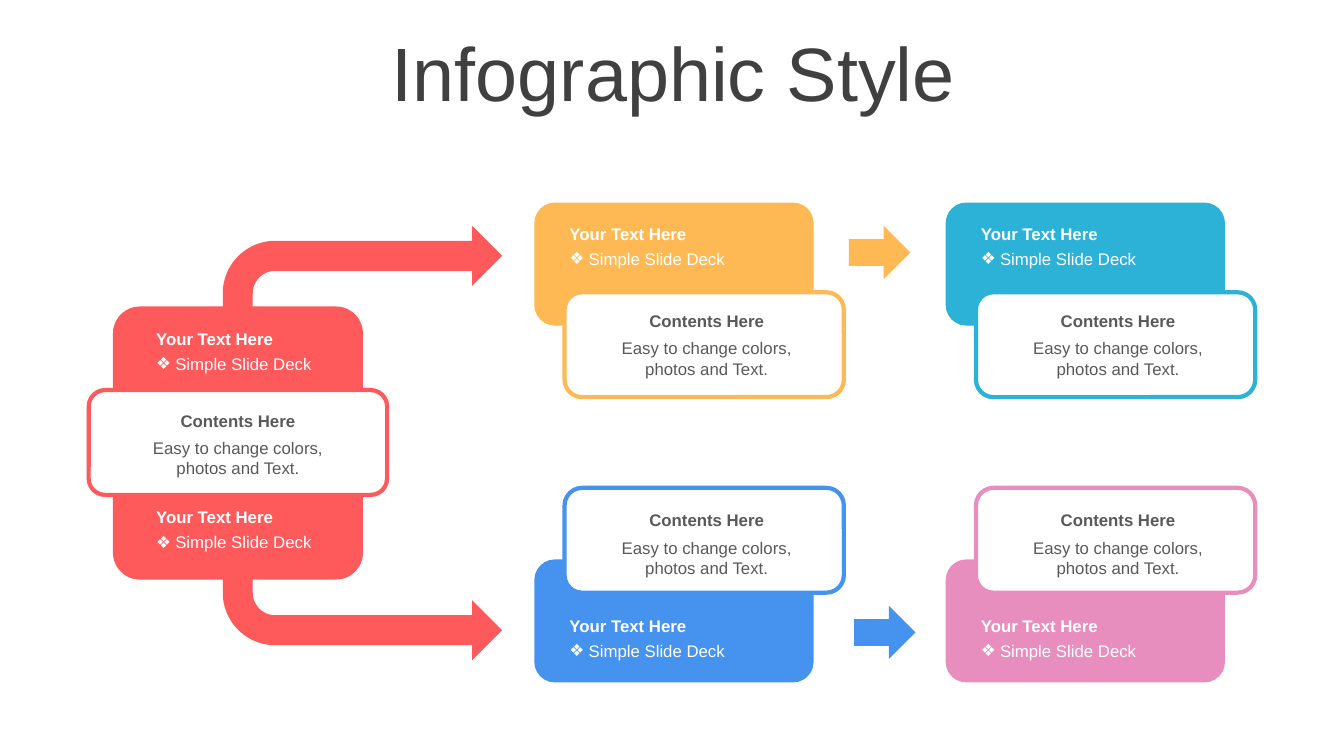
"""Build a one-slide infographic: a red source card branching into two rows of cards."""
from dataclasses import dataclass

from lxml.etree import SubElement
from pptx import Presentation
from pptx.dml.color import RGBColor
from pptx.enum.shapes import MSO_SHAPE
from pptx.enum.text import MSO_ANCHOR, MSO_AUTO_SIZE, PP_ALIGN
from pptx.oxml.ns import qn
from pptx.util import Inches, Pt

TITLE = "Infographic Style"
HEADING = "Your Text Here"
BULLET = "Simple Slide Deck"
CONTENTS = "Contents Here"
DETAIL = "Easy to change colors, photos and Text."


@dataclass(frozen=True)
class Theme:
    font: str = "Arial"
    title_size: int = 54
    text_size: int = 12
    outline: int = 3
    title: str = "404040"
    text: str = "595959"
    white: str = "FFFFFF"
    red: str = "FE5A5B"
    orange: str = "FFB954"
    cyan: str = "2CB2D7"
    blue: str = "4592EF"
    pink: str = "E78EBE"


THEME = Theme()

CARD_LEFT, CARD_STEP = 5.3, 4.08
ROWS = [
    {"colors": (THEME.orange, THEME.cyan), "block": 2.01, "panel": 2.9,
     "heading": 2.17, "contents": 3.04, "arrow": (8.42, 2.24)},
    {"colors": (THEME.blue, THEME.pink), "block": 5.55, "panel": 4.84,
     "heading": 6.06, "contents": 5.02, "arrow": (8.47, 6.01)},
]
BRANCHES = [(2.24, False), (5.36, True)]
SOURCE_HEADINGS = (3.21, 4.98)


def add_figure(page, kind, left, top, width, height, fill, line=None, corner=None):
    shape = page.shapes.add_shape(
        kind, Inches(left), Inches(top), Inches(width), Inches(height))
    shape.shadow.inherit = False
    shape.fill.solid()
    shape.fill.fore_color.rgb = RGBColor.from_string(fill)
    if line:
        shape.line.color.rgb = RGBColor.from_string(line)
        shape.line.width = Pt(THEME.outline)
    else:
        shape.line.fill.background()
    if corner:
        shape.adjustments[0] = corner
    return shape


def write(box, text, size=THEME.text_size, color=THEME.text, bold=False,
          align=PP_ALIGN.LEFT, spacing=None, bullet=None):
    frame = box.text_frame
    frame.word_wrap = True
    frame.auto_size = MSO_AUTO_SIZE.NONE
    frame.vertical_anchor = MSO_ANCHOR.MIDDLE
    para = frame.paragraphs[0]
    para.alignment = align
    para.space_before = Pt(0)
    if spacing:
        para.line_spacing = spacing
    if bullet:
        properties = para._p.get_or_add_pPr()
        properties.set("marL", str(Inches(0.19)))
        properties.set("indent", str(-Inches(0.19)))
        SubElement(properties, qn("a:buFont")).set("typeface", THEME.font)
        SubElement(properties, qn("a:buChar")).set("char", bullet)
    span = para.add_run()
    span.text = text
    span.font.name = THEME.font
    span.font.size = Pt(size)
    span.font.bold = bold
    span.font.color.rgb = RGBColor.from_string(color)


def add_text(page, text, left, top, width, height, **style):
    box = page.shapes.add_textbox(
        Inches(left), Inches(top), Inches(width), Inches(height))
    write(box, text, **style)


def add_heading(page, left, top, width):
    add_text(page, HEADING, left, top, width, 0.3, color=THEME.white, bold=True)
    add_text(page, BULLET, left, top + 0.25, width, 0.3, color=THEME.white, bullet="❖")


def add_contents(page, left, top, width):
    add_text(page, CONTENTS, left, top, width, 0.28, bold=True, align=PP_ALIGN.CENTER)
    add_text(page, DETAIL, left, top + 0.3, width, 0.43, align=PP_ALIGN.CENTER)


def add_source(page):
    for top, flipped in BRANCHES:
        branch = add_figure(page, MSO_SHAPE.BENT_ARROW, 2.21, top, 2.77, 1.19, THEME.red)
        if flipped:
            branch._element.spPr.find(qn("a:xfrm")).set("flipV", "1")
    add_figure(page, MSO_SHAPE.ROUNDED_RECTANGLE, 1.12, 3.04, 2.48, 2.71,
               THEME.red, corner=0.108)
    add_figure(page, MSO_SHAPE.ROUNDED_RECTANGLE, 0.88, 3.87, 2.96, 1.04,
               THEME.white, line=THEME.red, corner=0.157)
    add_contents(page, 1.35, 4.03, 2.02)
    for top in SOURCE_HEADINGS:
        add_heading(page, 1.45, top, 1.82)


def add_row(page, row):
    for column, color in enumerate(row["colors"]):
        left = CARD_LEFT + column * CARD_STEP
        add_figure(page, MSO_SHAPE.ROUNDED_RECTANGLE, left, row["block"], 2.77, 1.22, color)
        add_figure(page, MSO_SHAPE.ROUNDED_RECTANGLE, left + 0.3, row["panel"], 2.77, 1.04,
                   THEME.white, line=color)
        add_heading(page, left + 0.25, row["heading"], 2.34)
        add_contents(page, left + 0.58, row["contents"], 2.26)
    add_figure(page, MSO_SHAPE.RIGHT_ARROW, *row["arrow"], 0.61, 0.53, row["colors"][0])


def main():
    deck = Presentation()
    deck.slide_width, deck.slide_height = Inches(13.33), Inches(7.5)
    page = deck.slides.add_slide(deck.slide_layouts[5])
    title = page.shapes.title
    title.left, title.top = Inches(0.35), Inches(0.37)
    title.width, title.height = Inches(12.66), Inches(0.79)
    write(title, TITLE, size=THEME.title_size, color=THEME.title,
          align=PP_ALIGN.CENTER, spacing=0.9)
    add_source(page)
    for row in ROWS:
        add_row(page, row)
    deck.save("out.pptx")


if __name__ == "__main__":
    main()
